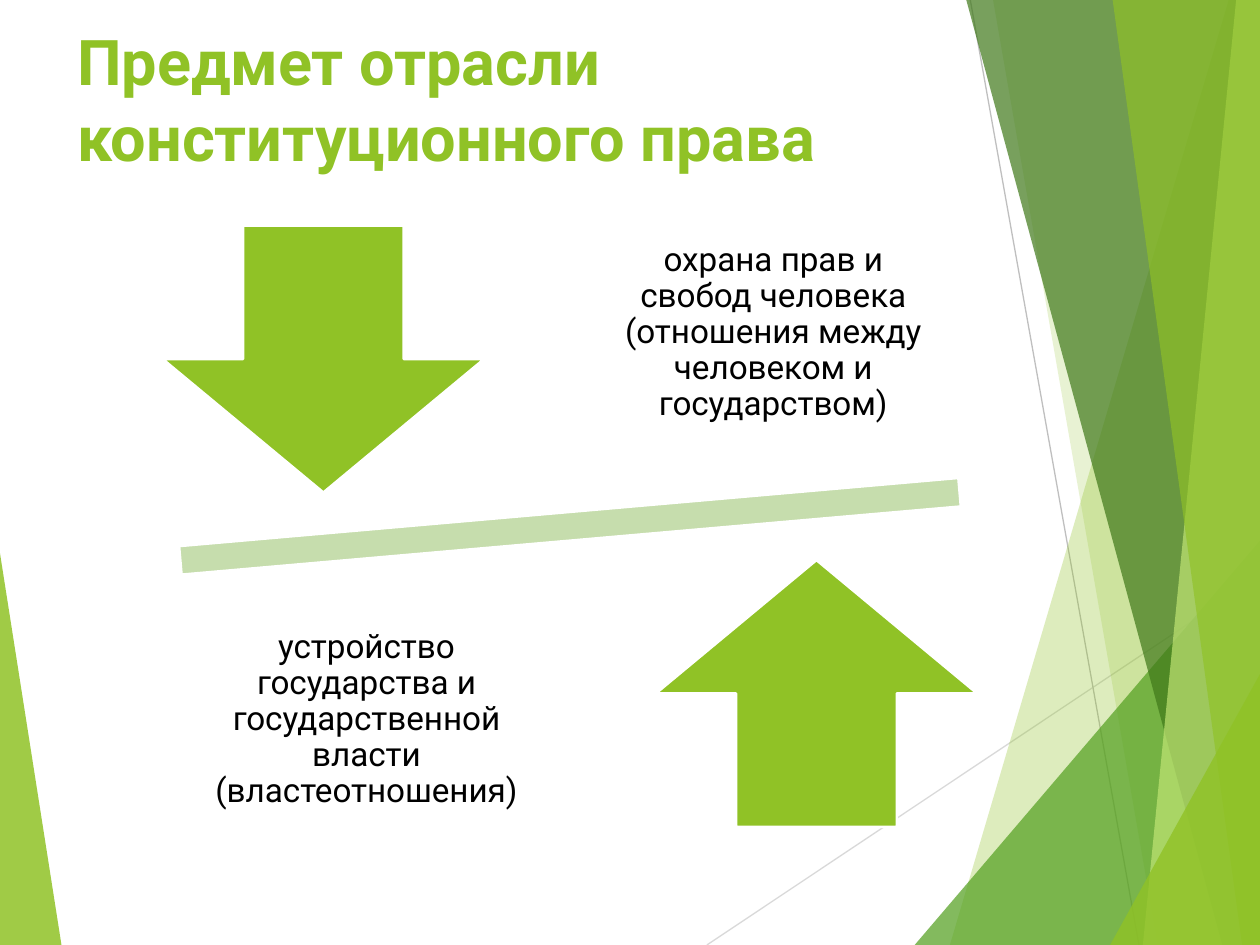
from dataclasses import dataclass

from lxml.etree import SubElement
from pptx import Presentation
from pptx.dml.color import RGBColor
from pptx.enum.shapes import MSO_CONNECTOR, MSO_SHAPE
from pptx.enum.text import MSO_ANCHOR, PP_ALIGN
from pptx.oxml.ns import qn
from pptx.util import Cm, Pt


@dataclass(frozen=True)
class Theme:
    font: str = "Roboto"
    title_size: float = 36
    body_size: float = 19
    green: str = "90C226"
    leaf: str = "54A021"
    forest: str = "3F7819"
    lime: str = "C0E474"
    bar: str = "C6DDAD"
    white: str = "FFFFFF"
    text: str = "000000"
    ray_light: str = "D9D9D9"
    ray_dark: str = "BFBFBF"


THEME = Theme()
WIDTH, HEIGHT = 25.4, 19.05  # slide size, cm


def rgb(value):
    return RGBColor.from_string(value)


def fill_shape(sp, color, alpha=None, outline=None):
    """Flat fill with optional opacity in percent and optional outline colour."""
    sp.shadow.inherit = False
    sp.fill.solid()
    sp.fill.fore_color.rgb = rgb(color)
    if alpha is not None:
        clr = sp.fill._xPr.find(qn("a:solidFill"))[0]
        SubElement(clr, qn("a:alpha")).set("val", str(alpha * 1000))
    if outline:
        sp.line.color.rgb = rgb(outline)
        sp.line.width = Pt(1.5)
    else:
        sp.line.fill.background()


def style_text(p, size, color, bold=False):
    p.font.name = THEME.font
    p.font.size = Pt(size)
    p.font.bold = bold
    p.font.color.rgb = rgb(color)


def add_ray(s, start, end, color):
    line = s.shapes.add_connector(MSO_CONNECTOR.STRAIGHT, *map(Cm, start + end))
    line.line.color.rgb = rgb(color)
    line.line.width = Pt(0.75)
    SubElement(line._element.spPr, qn("a:effectLst"))


def add_facet(s, top, foot, side, color, alpha):
    """Translucent panel from a slanted edge (top to foot) to a side of the slide."""
    points = [(Cm(x), Cm(y)) for x, y in
              (top, (foot, HEIGHT), (side, HEIGHT), (side, top[1]))]
    builder = s.shapes.build_freeform(*points[0], scale=1.0)
    builder.add_line_segments(points[1:], close=True)
    fill_shape(builder.convert_to_shape(), color, alpha)


def add_backdrop(s):
    add_facet(s, (0, 11.15), 1.24, 0, THEME.green, 85)
    add_ray(s, (14.25, HEIGHT), (WIDTH, 11.61), THEME.ray_light)
    add_ray(s, (19.56, 0), (22.96, HEIGHT), THEME.ray_dark)
    for top, foot, color, alpha in (
        ((24.77, 0), 19.15, THEME.green, 30),
        ((20.02, 0), 23.34, THEME.green, 20),
        ((WIDTH, 10.9), 18.44, THEME.leaf, 72),
        ((19.48, 0), 24.64, THEME.forest, 70),
        ((24.92, 0), 23.04, THEME.lime, 70),
        ((22.43, 0), 25.04, THEME.green, 65),
        ((WIDTH, 13.59), 22.38, THEME.green, 80),
    ):
        add_facet(s, top, foot, WIDTH, color, alpha)


def add_title(s, text, left, top, width, height):
    title = s.shapes.title
    title._element.getparent().append(title._element)  # in front of the backdrop
    title.left, title.top, title.width, title.height = map(
        Cm, (left, top, width, height))
    tf = title.text_frame
    tf.text = text
    tf.word_wrap = True
    tf.vertical_anchor = MSO_ANCHOR.TOP
    p = tf.paragraphs[0]
    p.alignment = PP_ALIGN.LEFT
    style_text(p, THEME.title_size, THEME.green, bold=True)


def add_balance(s, left, top, width, height, upper_text, lower_text):
    """Tilted bar with an arrow and a caption on each side, symmetric about the centre."""
    def centred(dx, dy, w, h):
        return [Cm(v) for v in (left + width / 2 + dx - w / 2,
                                top + height / 2 + dy - h / 2, w, h)]

    bar = s.shapes.add_shape(MSO_SHAPE.MATH_MINUS, *centred(0, 0, width, 2.46))
    bar.rotation = 355
    fill_shape(bar, THEME.bar, outline=THEME.white)

    for side, arrow, text in ((-1, MSO_SHAPE.DOWN_ARROW, upper_text),
                              (1, MSO_SHAPE.UP_ARROW, lower_text)):
        sp = s.shapes.add_shape(arrow, *centred(side * 4.97, side * 3.37, 6.48, 5.38))
        fill_shape(sp, THEME.green, outline=THEME.white)
        box = s.shapes.add_textbox(*centred(-side * 4.1, side * 3.9, 6.91, 5.64))
        tf = box.text_frame
        tf.text = text
        tf.word_wrap = True
        tf.vertical_anchor = MSO_ANCHOR.MIDDLE
        tf.margin_left = tf.margin_right = tf.margin_top = tf.margin_bottom = Cm(0.38)
        p = tf.paragraphs[0]
        p.alignment = PP_ALIGN.CENTER
        p.line_spacing = 0.9
        style_text(p, THEME.body_size, THEME.text)


def main():
    prs = Presentation()
    prs.slide_width, prs.slide_height = Cm(WIDTH), Cm(HEIGHT)
    s = prs.slides.add_slide(prs.slide_layouts[5])
    add_backdrop(s)
    add_title(s, "Предмет отрасли конституционного права", 1.3, 0.33, 21.16, 3.18)
    add_balance(
        s, 0.76, 3.89, 21.46, 13.44,
        "охрана прав и свобод человека (отношения между человеком и государством)",
        "устройство государства и государственной власти (властеотношения)",
    )
    prs.save("out.pptx")


if __name__ == "__main__":
    main()
